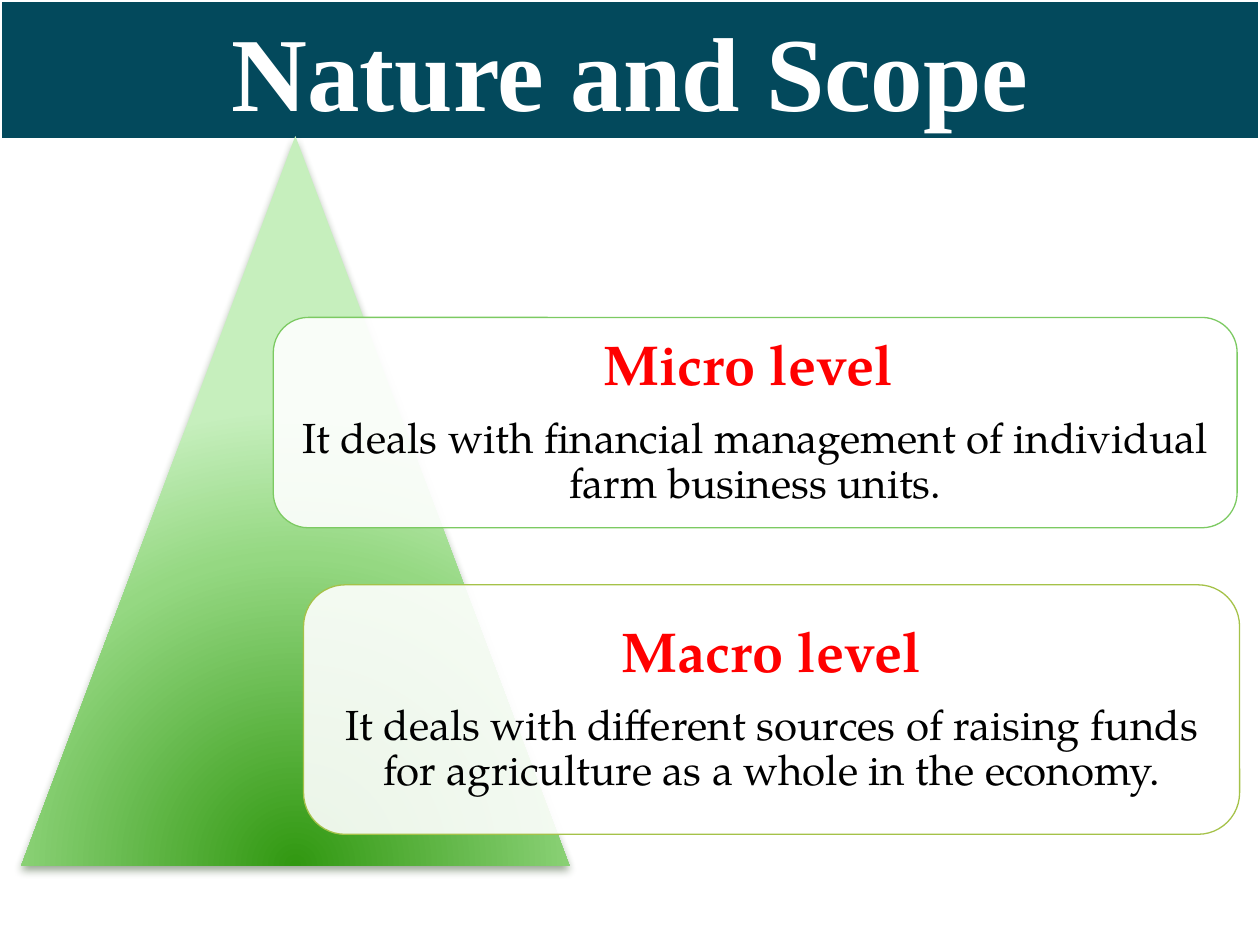
from pptx import Presentation
from pptx import util as u
from pptx.dml.color import RGBColor
from pptx.enum import shapes, text
from pptx.oxml import parse_xml
from pptx.oxml.ns import nsdecls, qn

TITLE = "Nature and Scope"
LEVELS = [
    {"head": "Micro level ",
     "body": "It deals with financial management of individual farm business units.",
     "at": (5.51, 6.4, 19.43, 4.24), "edge": "7CCA62"},
    {"head": "Macro level",
     "body": "It deals with different sources of raising funds for agriculture "
             "as a whole in the economy.",
     "at": (6.12, 11.79, 18.87, 5.03), "edge": "A5C249"},
]
BANNER = (0, 0, 25.4, 2.82)
PEAK = (0.43, 2.74, 11.05, 14.71)
THEME = {
    "serif": "Times New Roman", "book": "TeX Gyre Pagella",
    "title": 60, "head": 32, "body": 24,
    "white": "FFFFFF", "banner": "03495C", "red": "FF0000", "black": "000000",
    "greens": [(0, "319811"), (68, "95D882"), (100, "C6EFBD")],
    "shade": "2B4821",
}
PAD = 0.33
CORNER = 0.16667 * 0.29289
AFTER = 0.35


def rgb(name):
    return RGBColor.from_string(THEME.get(name, name))


def add_box(slide, kind, at, fill=None, edge=None, width=0.75):
    box = slide.shapes.add_shape(kind, *map(u.Cm, at))
    box.shadow.inherit = False
    if fill:
        box.fill.solid()
        box.fill.fore_color.rgb = rgb(fill)
    if edge:
        box.line.color.rgb = rgb(edge)
        box.line.width = u.Pt(width)
    else:
        box.line.fill.background()
    return box


def add_run(para, words, size, font, color, bold):
    para.alignment = text.PP_ALIGN.CENTER
    run = para.add_run()
    run.text = words
    run.font.size = u.Pt(THEME[size])
    run.font.name = THEME[font]
    run.font.bold = bold
    run.font.color.rgb = rgb(color)


def add_banner(slide):
    box = add_box(slide, shapes.MSO_SHAPE.RECTANGLE, BANNER, "banner", "white", 2.25)
    frame = box.text_frame
    frame.word_wrap = True
    frame.auto_size = text.MSO_AUTO_SIZE.SHAPE_TO_FIT_TEXT
    frame.vertical_anchor = text.MSO_ANCHOR.TOP
    add_run(frame.paragraphs[0], TITLE, "title", "serif", "white", True)


def add_peak(slide):
    peak = add_box(slide, shapes.MSO_SHAPE.ISOSCELES_TRIANGLE, PEAK)
    props = peak.element.spPr
    stops = "".join(
        f'<a:gs pos="{pos * 1000}"><a:srgbClr val="{color}"/></a:gs>'
        for pos, color in THEME["greens"])
    props.find(qn("a:prstGeom")).addnext(parse_xml(
        f'<a:gradFill {nsdecls("a")} rotWithShape="1"><a:gsLst>{stops}</a:gsLst>'
        '<a:path path="circle"><a:fillToRect l="50000" t="130000" r="50000" b="-30000"/>'
        '</a:path></a:gradFill>'))
    props.find(qn("a:effectLst")).append(parse_xml(
        f'<a:outerShdw {nsdecls("a")} blurRad="{u.Pt(4.5)}" dist="{u.Pt(3)}" '
        f'dir="5400000" rotWithShape="0"><a:srgbClr val="{THEME["shade"]}">'
        '<a:alpha val="48000"/></a:srgbClr></a:outerShdw>'))


def add_level(slide, level):
    box = add_box(slide, shapes.MSO_SHAPE.ROUNDED_RECTANGLE,
                  level["at"], "white", level["edge"])
    tint = box.element.spPr.find(qn("a:solidFill")).find(qn("a:srgbClr"))
    tint.append(parse_xml(f'<a:alpha {nsdecls("a")} val="90000"/>'))
    frame = box.text_frame
    frame.word_wrap = True
    frame.vertical_anchor = text.MSO_ANCHOR.MIDDLE
    inset = u.Cm(PAD - CORNER * level["at"][3])
    frame.margin_left = frame.margin_right = inset
    frame.margin_top = frame.margin_bottom = inset
    paras = [frame.paragraphs[0], frame.add_paragraph()]
    for para, part, color in zip(paras, ("head", "body"), ("red", "black")):
        para.line_spacing = 0.9
        para.space_after = u.Pt(round(THEME[part] * AFTER))
        add_run(para, level[part], part, "book", color, part == "head")


def main():
    deck = Presentation()
    deck.slide_width, deck.slide_height = u.Cm(25.4), u.Cm(19.05)
    slide = deck.slides.add_slide(deck.slide_layouts[6])
    add_banner(slide)
    add_peak(slide)
    for level in LEVELS:
        add_level(slide, level)
    deck.save("out.pptx")


if __name__ == "__main__":
    main()
